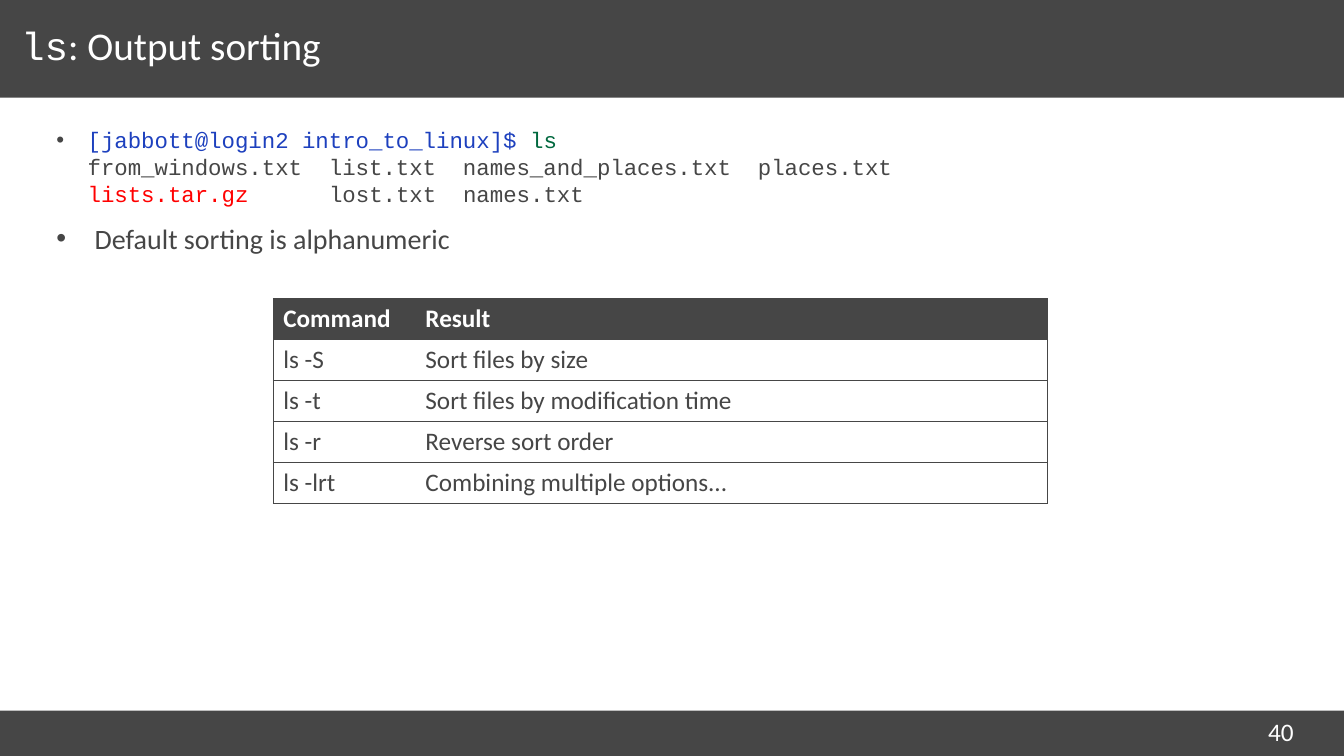
"""Build the slide on output sorting with the ls command."""
import pptx
import pptx.util
import pptx.dml.color
import pptx.enum.shapes
import pptx.enum.text
import pptx.oxml.ns
import lxml.etree

Inches = pptx.util.Inches
Pt = pptx.util.Pt
RGBColor = pptx.dml.color.RGBColor
qn = pptx.oxml.ns.qn

GREY = RGBColor(0x46, 0x46, 0x46)
WHITE = RGBColor(0xFF, 0xFF, 0xFF)
BLUE = RGBColor(0x1D, 0x40, 0xBE)
GREEN = RGBColor(0x00, 0x68, 0x3E)
RED = RGBColor(0xFF, 0x00, 0x00)
CODE_FONT = "Courier New"
TEXT_FONT = "Calibri"


def add_span(para, text, size, color, font=TEXT_FONT, bold=False):
    """Append one formatted run to a paragraph."""
    span = para.add_run()
    span.text = text
    span.font.size = Pt(size)
    span.font.color.rgb = color
    span.font.name = font
    span.font.bold = bold


def add_box(left, top, width, height, side_margin):
    """Add a wrapping text box and return its text frame."""
    box = page.shapes.add_textbox(Inches(left), Inches(top), Inches(width), Inches(height))
    frame = box.text_frame
    frame.word_wrap = True
    frame.margin_left = frame.margin_right = Inches(side_margin)
    return frame


deck = pptx.Presentation()
deck.slide_width = Inches(13.33)
deck.slide_height = Inches(7.5)
page = deck.slides.add_slide(deck.slide_layouts[6])

for top, height in ((7.05, 0.45), (0, 0.97)):
    band = page.shapes.add_shape(
        pptx.enum.shapes.MSO_SHAPE.RECTANGLE, 0, Inches(top), deck.slide_width, Inches(height)
    )
    band.shadow.inherit = False
    band.fill.solid()
    band.fill.fore_color.rgb = GREY
    band.line.fill.background()

title = add_box(0.21, 0.17, 11.52, 0.64, 0)
title.vertical_anchor = pptx.enum.text.MSO_ANCHOR.MIDDLE
title.paragraphs[0].line_spacing = 0.8
add_span(title.paragraphs[0], "ls", 28, WHITE, CODE_FONT)
add_span(title.paragraphs[0], ": Output sorting", 28, WHITE)

body = add_box(0.56, 1.2, 12.2, 5.67, 0)
listing = body.paragraphs[0]
remark = body.add_paragraph()
for para, indent in ((listing, 0.31), (remark, 0.38)):
    para.space_after = Pt(4)
    properties = para._p.get_or_add_pPr()
    properties.set("marL", str(Inches(indent)))
    properties.set("indent", str(-Inches(indent)))
    bullet_color = lxml.etree.SubElement(properties, qn("a:buClr"))
    lxml.etree.SubElement(bullet_color, qn("a:srgbClr"), val=str(GREY))
    lxml.etree.SubElement(properties, qn("a:buFont"), typeface="Arial")
    lxml.etree.SubElement(properties, qn("a:buChar"), char="•")

listing.line_spacing = Pt(19.4)
LISTING_LINES = (
    (("[jabbott@login2 intro_to_linux]$ ", BLUE), ("ls", GREEN)),
    (("from_windows.txt  list.txt  names_and_places.txt  places.txt", GREY),),
    (("lists.tar.gz      ", RED), ("lost.txt  names.txt", GREY)),
)
for number, line in enumerate(LISTING_LINES):
    if number:
        listing.add_line_break()
    for text, color in line:
        add_span(listing, text, 16, color, CODE_FONT)

remark.space_before = Pt(6)
add_span(remark, "Default sorting is alphanumeric", 20, GREY)

page_number = add_box(12.48, 7.06, 0.7, 0.25, 0.1)
add_span(page_number.paragraphs[0], "40", 18, WHITE)

COMMANDS = (
    ("Command", "Result"),
    ("ls -S", "Sort files by size"),
    ("ls -t", "Sort files by modification time"),
    ("ls -r", "Reverse sort order"),
    ("ls -lrt", "Combining multiple options..."),
)
table = page.shapes.add_table(
    len(COMMANDS), 2, Inches(2.71), Inches(2.96), Inches(7.68), Inches(2.03)
).table
table.horz_banding = False
table.columns[0].width = Inches(1.41)
table.columns[1].width = Inches(6.27)

for row, texts in enumerate(COMMANDS):
    header = row == 0
    for column, text in enumerate(texts):
        cell = table.cell(row, column)
        add_span(cell.text_frame.paragraphs[0], text, 18, WHITE if header else GREY, bold=header)
        if not header:
            cell.vertical_anchor = pptx.enum.text.MSO_ANCHOR.MIDDLE
        inner_side = "lnR" if column == 0 else "lnL"
        for side in ("lnL", "lnR", "lnT", "lnB"):
            border = lxml.etree.SubElement(
                cell._tc.get_or_add_tcPr(), qn(f"a:{side}"), w=str(Pt(0.5))
            )
            if side == inner_side:
                lxml.etree.SubElement(border, qn("a:noFill"))
            else:
                border_fill = lxml.etree.SubElement(border, qn("a:solidFill"))
                lxml.etree.SubElement(border_fill, qn("a:srgbClr"), val=str(GREY))
        if header:
            cell.fill.solid()
            cell.fill.fore_color.rgb = GREY
        else:
            cell.fill.background()

deck.save("out.pptx")
